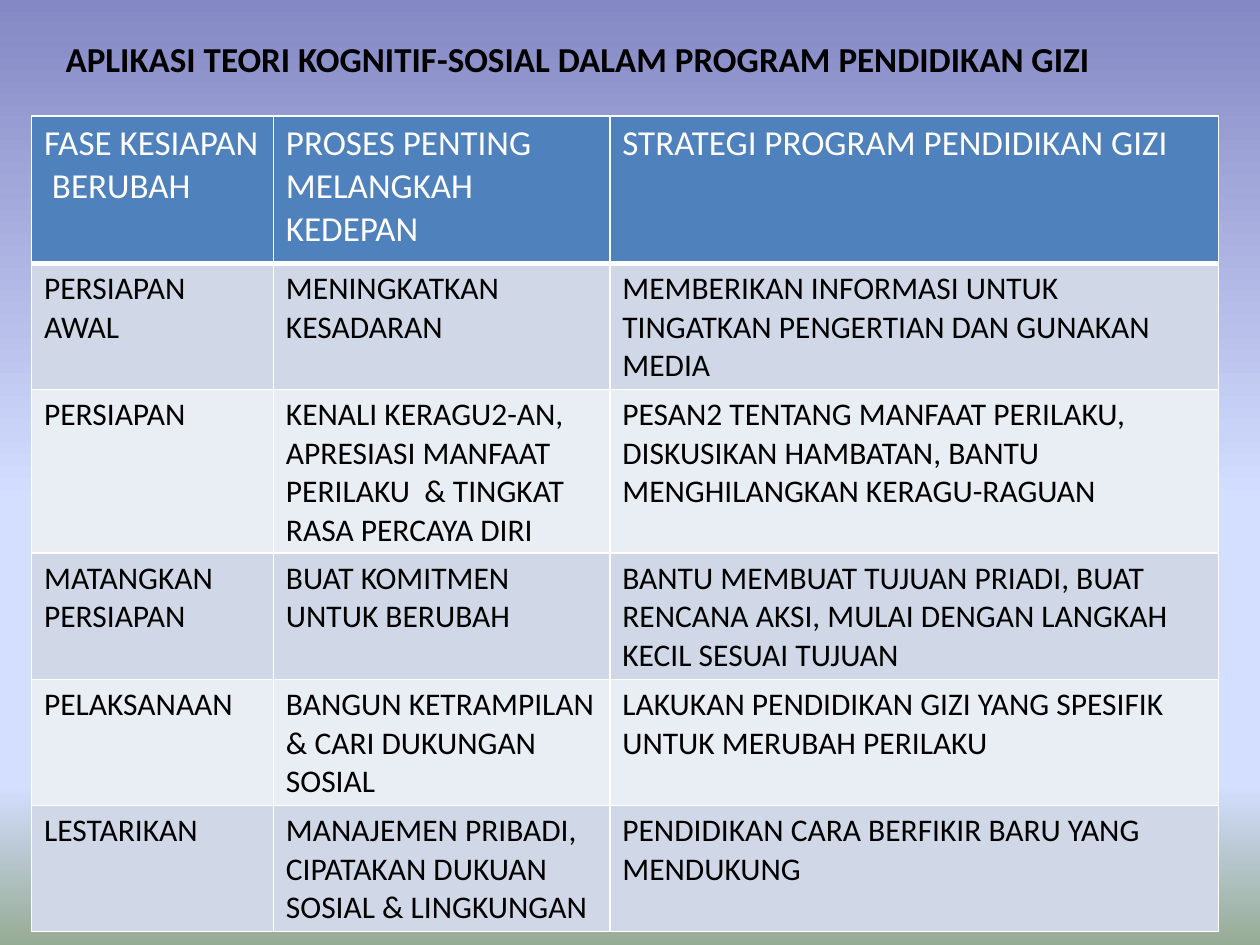
import dataclasses

import lxml.etree
import pptx
import pptx.dml.color
import pptx.enum.text
import pptx.oxml.ns
import pptx.util

Inches = pptx.util.Inches
Pt = pptx.util.Pt
qn = pptx.oxml.ns.qn


@dataclasses.dataclass(frozen=True)
class Theme:
    font: str = "Calibri"
    title_size: int = 20
    header_size: int = 20
    body_size: int = 18
    text: str = "000000"
    header_text: str = "FFFFFF"
    header_fill: str = "4F81BD"
    band_fills: tuple = ("D0D8E8", "E9EDF4")
    border: str = "FFFFFF"
    border_width: int = 1
    header_rule_width: int = 3
    # Background stops, top to bottom: percent and colour
    background: tuple = (
        (0, "8488C4"), (53, "D4DEFF"), (83, "D4DEFF"), (100, "96AB94"))


def rgb(color):
    return pptx.dml.color.RGBColor.from_string(color)


class SlideBuilder:
    def __init__(self, slide, theme):
        self.slide = slide
        self.theme = theme

    def background(self):
        fill = self.slide.background.fill
        fill.gradient()
        fill.gradient_angle = 270  # counter-clockwise, so top to bottom
        stops = self.slide.element.find(".//" + qn("a:gsLst"))
        for stop in list(stops):
            stops.remove(stop)
        for percent, color in self.theme.background:
            stop = lxml.etree.SubElement(
                stops, qn("a:gs"), pos=str(percent * 1000))
            lxml.etree.SubElement(stop, qn("a:srgbClr"), val=color)

    def format_text(self, frame, size, color, bold=False):
        for para in frame.paragraphs:
            para.alignment = pptx.enum.text.PP_ALIGN.LEFT
            for span in para.runs:
                span.font.name = self.theme.font
                span.font.size = Pt(size)
                span.font.bold = bold
                span.font.color.rgb = rgb(color)

    def title(self, text, left, top, width, height):
        box = self.slide.shapes.title
        box.left, box.top = Inches(left), Inches(top)
        box.width, box.height = Inches(width), Inches(height)
        frame = box.text_frame
        frame.text = text
        frame.word_wrap = True
        frame.auto_size = pptx.enum.text.MSO_AUTO_SIZE.SHAPE_TO_FIT_TEXT
        frame.vertical_anchor = pptx.enum.text.MSO_ANCHOR.TOP
        self.format_text(frame, self.theme.title_size, self.theme.text, True)

    def cell_borders(self, cell, bottom_width):
        properties = cell._tc.get_or_add_tcPr()
        width = self.theme.border_width
        sides = {"L": width, "R": width, "T": width, "B": bottom_width}
        for side, points in sides.items():
            line = lxml.etree.SubElement(
                properties, qn("a:ln" + side), w=str(Pt(points)))
            fill = lxml.etree.SubElement(line, qn("a:solidFill"))
            lxml.etree.SubElement(
                fill, qn("a:srgbClr"), val=self.theme.border)

    def table(self, rows, left, top, widths, heights):
        theme = self.theme
        table = self.slide.shapes.add_table(
            len(rows), len(widths), Inches(left), Inches(top),
            Inches(sum(widths)), Inches(sum(heights))).table
        for column, width in zip(table.columns, widths):
            column.width = Inches(width)
        for row, height in zip(table.rows, heights):
            row.height = Inches(height)

        for row_index, texts in enumerate(rows):
            if row_index == 0:
                size, color = theme.header_size, theme.header_text
                fill, rule = theme.header_fill, theme.header_rule_width
            else:
                size, color = theme.body_size, theme.text
                fill = theme.band_fills[(row_index - 1) % 2]
                rule = theme.border_width
            for column_index, text in enumerate(texts):
                cell = table.cell(row_index, column_index)
                cell.text_frame.text = text
                self.format_text(cell.text_frame, size, color)
                self.cell_borders(cell, rule)
                cell.fill.solid()
                cell.fill.fore_color.rgb = rgb(fill)


PHASES = [
    ("FASE KESIAPAN  BERUBAH",
     "PROSES PENTING MELANGKAH KEDEPAN",
     "STRATEGI PROGRAM PENDIDIKAN GIZI"),
    ("PERSIAPAN AWAL",
     "MENINGKATKAN KESADARAN",
     "MEMBERIKAN INFORMASI UNTUK TINGATKAN PENGERTIAN DAN GUNAKAN MEDIA"),
    ("PERSIAPAN",
     "KENALI KERAGU2-AN, APRESIASI MANFAAT PERILAKU  & TINGKAT "
     "RASA PERCAYA DIRI",
     "PESAN2 TENTANG MANFAAT PERILAKU, DISKUSIKAN HAMBATAN, BANTU "
     "MENGHILANGKAN KERAGU-RAGUAN"),
    ("MATANGKAN PERSIAPAN",
     "BUAT KOMITMEN UNTUK BERUBAH",
     "BANTU MEMBUAT TUJUAN PRIADI, BUAT RENCANA AKSI, MULAI DENGAN "
     "LANGKAH KECIL SESUAI TUJUAN"),
    ("PELAKSANAAN",
     "BANGUN KETRAMPILAN & CARI DUKUNGAN SOSIAL",
     "LAKUKAN PENDIDIKAN GIZI YANG SPESIFIK UNTUK MERUBAH PERILAKU"),
    ("LESTARIKAN",
     "MANAJEMEN PRIBADI, CIPATAKAN DUKUAN SOSIAL & LINGKUNGAN",
     "PENDIDIKAN CARA BERFIKIR BARU YANG MENDUKUNG"),
]


def main():
    deck = pptx.Presentation()
    deck.slide_width, deck.slide_height = Inches(10), Inches(7.5)
    title_only = deck.slide_layouts[5]
    page = SlideBuilder(deck.slides.add_slide(title_only), Theme())

    # Background and title
    page.background()
    page.title("APLIKASI TEORI KOGNITIF-SOSIAL DALAM PROGRAM PENDIDIKAN GIZI",
               0.42, 0.25, 9.33, 0.44)

    # Phases of readiness, with process and strategy
    page.table(PHASES, 0.25, 0.92,
               widths=[1.92, 2.67, 4.83],
               heights=[1.17, 1, 1.3, 1, 1, 1])

    deck.save("out.pptx")


if __name__ == "__main__":
    main()
